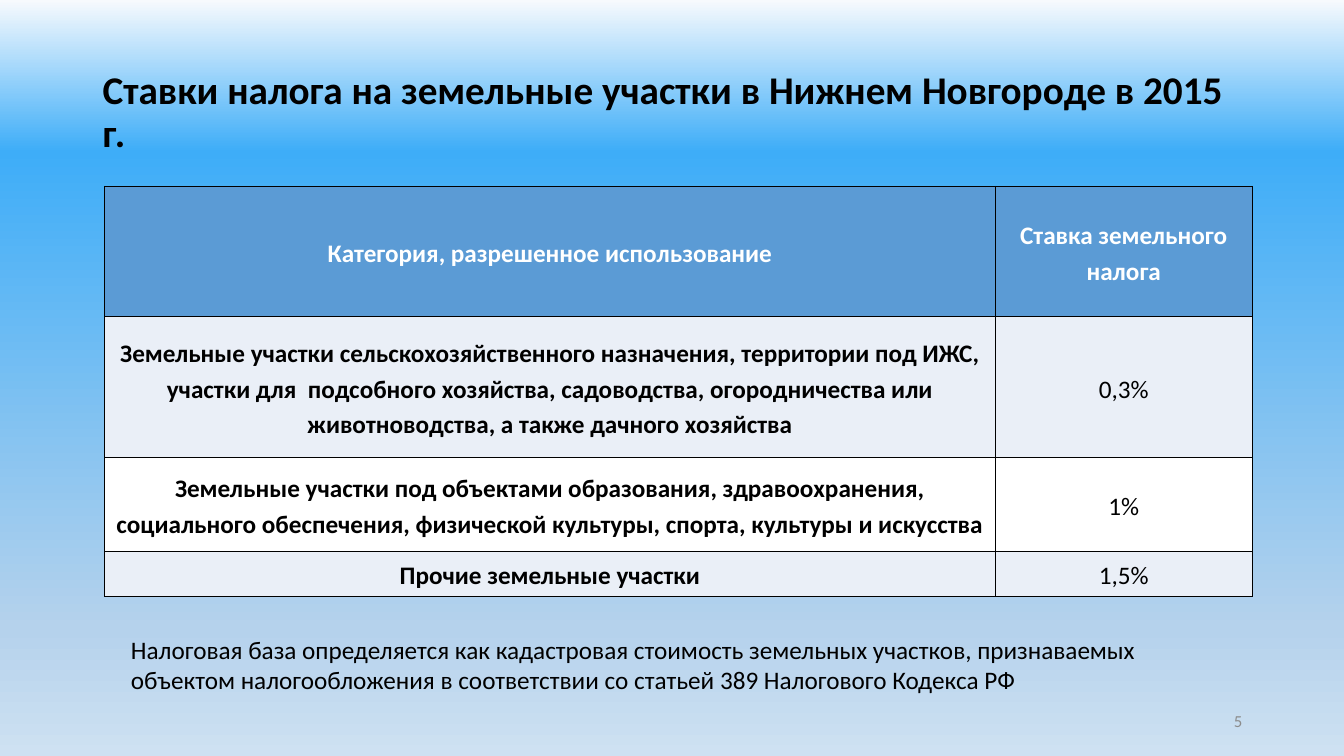
from lxml.etree import SubElement
from pptx import Presentation
from pptx.dml.color import RGBColor as RGB
from pptx.enum.text import MSO_ANCHOR as ANCHOR, PP_ALIGN as ALIGN
from pptx.oxml.ns import qn
from pptx.util import Inches, Pt

BLACK = RGB(0x00, 0x00, 0x00)
WHITE = RGB(0xFF, 0xFF, 0xFF)
GREY = RGB(0x8C, 0x8C, 0x8C)
HEADER = RGB(0x5B, 0x9B, 0xD5)
BAND = RGB(0xEA, 0xEF, 0xF7)
SKY = ((0, RGB(0xF7, 0xFA, 0xFD)), (20, RGB(0x3E, 0xAD, 0xF8)),
       (83, RGB(0xB5, 0xD2, 0xEC)), (100, RGB(0xCE, 0xE1, 0xF2)))

TITLE = "Ставки налога на земельные участки в Нижнем Новгороде в 2015 г."
NOTE = ("Налоговая база определяется как кадастровая стоимость земельных участков, "
        "признаваемых объектом налогообложения в соответствии со статьей 389 "
        "Налогового Кодекса РФ")
COLS = (8.83, 2.55)
RATES = (
    (1.29, "Категория, разрешенное использование", "Ставка земельного налога"),
    (1.4, "Земельные участки сельскохозяйственного назначения, территории под ИЖС, "
          "участки для  подсобного хозяйства, садоводства, огородничества или "
          "животноводства, а также дачного хозяйства", "0,3%"),
    (0.93, "Земельные участки под объектами образования, здравоохранения, социального "
           "обеспечения, физической культуры, спорта, культуры и искусства", "1%"),
    (0.45, "Прочие земельные участки", "1,5%"),
)


def set_text(tf, text, color, size=18, bold=False, **para):
    """Write one formatted paragraph into a text frame."""
    p = tf.paragraphs[0]
    for name, value in para.items():
        setattr(p, name, value)
    r = p.add_run()
    r.text = text
    for name, value in {"name": "Calibri", "size": Pt(size), "bold": bold}.items():
        setattr(r.font, name, value)
    r.font.color.rgb = color


def add_text(s, box, text, color, anchor=ANCHOR.TOP, **fmt):
    """Place a wrapping text box in the given box."""
    tf = s.shapes.add_textbox(*map(Inches, box)).text_frame
    tf.word_wrap = True
    tf.vertical_anchor = anchor
    set_text(tf, text, color, **fmt)


def paint_background(s):
    """Fill the slide with the vertical sky gradient."""
    fill = s.background.fill
    fill.gradient()
    stops = s.element.find(".//" + qn("a:gsLst"))
    stops.clear()
    for pos, color in SKY:
        gs = SubElement(stops, qn("a:gs"), pos=str(pos * 1000))
        SubElement(gs, qn("a:srgbClr"), val=str(color))
    s.element.find(".//" + qn("a:lin")).set("ang", "5400000")


def add_borders(cell):
    """Draw thin black lines on all four sides of a cell."""
    pr = cell._tc.get_or_add_tcPr()
    for i, side in enumerate(("lnL", "lnR", "lnT", "lnB")):
        ln = pr.makeelement(qn("a:" + side), {"w": str(Pt(1))})
        solid = SubElement(ln, qn("a:solidFill"))
        SubElement(solid, qn("a:srgbClr"), val=str(BLACK))
        pr.insert(i, ln)


def add_rates(s, left, top):
    """Build the table of tax rates from its top left corner."""
    size = sum(COLS), sum(row[0] for row in RATES)
    table = s.shapes.add_table(len(RATES), len(COLS),
                               *map(Inches, (left, top, *size))).table
    for col, width in zip(table.columns, COLS):
        col.width = Inches(width)
    for i, (height, *texts) in enumerate(RATES):
        table.rows[i].height = Inches(height)
        fill = HEADER if i == 0 else BAND if i % 2 else WHITE
        for j, text in enumerate(texts):
            cell = table.cell(i, j)
            layout = {"margin_left": Inches(0.07), "margin_right": Inches(0.07),
                      "margin_top": 0, "margin_bottom": 0,
                      "vertical_anchor": ANCHOR.MIDDLE}
            for name, value in layout.items():
                setattr(cell, name, value)
            cell.fill.solid()
            cell.fill.fore_color.rgb = fill
            set_text(cell.text_frame, text, BLACK if i else WHITE,
                     bold=i == 0 or j == 0, alignment=ALIGN.CENTER, line_spacing=1.15)
            add_borders(cell)


def build_rates_slide(prs):
    """Add the slide with the land tax rates."""
    s = prs.slides.add_slide(prs.slide_layouts[6])
    paint_background(s)
    add_text(s, (0.92, 0.4, 11.5, 1.45), TITLE, BLACK, ANCHOR.MIDDLE,
             size=28, bold=True, line_spacing=0.9)
    add_rates(s, 1.04, 1.85)
    add_text(s, (9.42, 6.95, 3, 0.4), "5", GREY, ANCHOR.MIDDLE,
             size=12, alignment=ALIGN.RIGHT)
    add_text(s, (1.2, 6.24, 11.21, 0.71), NOTE, BLACK)


def main():
    """Create and save the presentation."""
    prs = Presentation()
    prs.slide_width, prs.slide_height = Inches(13.33), Inches(7.5)
    build_rates_slide(prs)
    prs.save("out.pptx")


if __name__ == "__main__":
    main()
